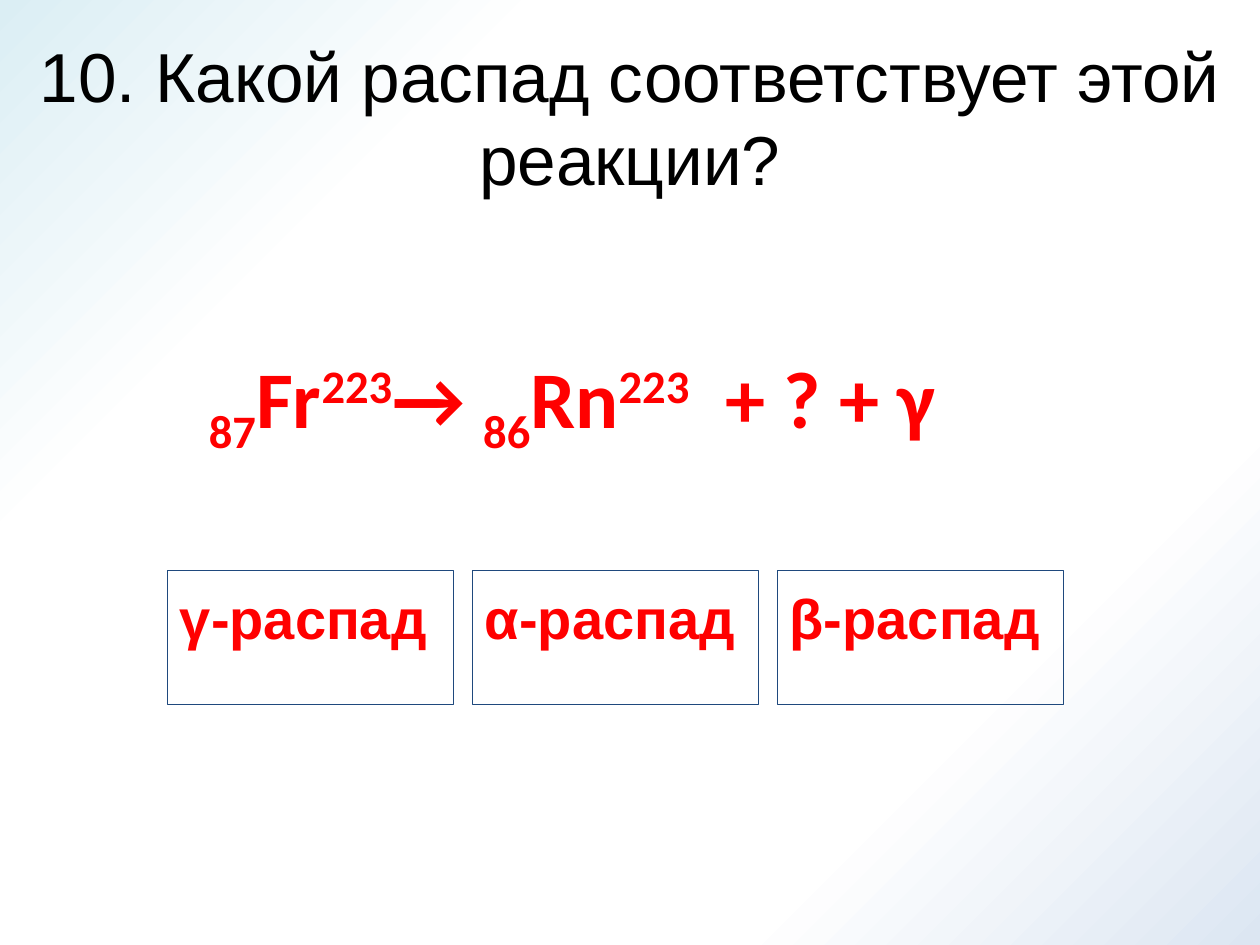
from lxml import etree
from pptx import Presentation
from pptx.dml.color import RGBColor
from pptx.enum.shapes import MSO_SHAPE
from pptx.enum.text import MSO_ANCHOR, PP_ALIGN
from pptx.oxml.ns import qn
from pptx.util import Inches, Pt

RECT = MSO_SHAPE.RECTANGLE
TOP, MIDDLE = MSO_ANCHOR.TOP, MSO_ANCHOR.MIDDLE
LEFT, CENTER = PP_ALIGN.LEFT, PP_ALIGN.CENTER

TITLE = "10. Какой распад соответствует этой реакции?"
SUB, BASE, SUPER = -25, 0, 30
EQUATION = [("87", SUB), ("Fr", BASE), ("223", SUPER), ("→ ", BASE),
            ("86", SUB), ("Rn", BASE), ("223", SUPER), ("  + ? + γ", BASE)]
ANSWERS = ["γ-распад", "α-распад", "β-распад"]
BACKGROUND = [(0, "DCE6F2"), (24, "FFFFFF"), (75, "FFFFFF"), (100, "DBEEF4")]
RED, BLACK, NAVY = "FF0000", "000000", "1F497D"
ANSWER_LEFT, ANSWER_TOP, ANSWER_W, ANSWER_H, ANSWER_STEP = 1.33, 4.53, 2.27, 1.06, 2.42


def rgb(color):
    return RGBColor.from_string(color)


def paint_background(s):
    fill = s.background.fill
    fill.gradient()
    fill.gradient_angle = 135
    stops = s.background._cSld.find(".//" + qn("a:gsLst"))
    for stop in list(stops):
        stops.remove(stop)
    for percent, color in BACKGROUND:
        stop = etree.SubElement(stops, qn("a:gs"), pos=str(percent * 1000))
        etree.SubElement(stop, qn("a:srgbClr"), val=color)


def write(shape, runs, font, size, color, bold=False, align=LEFT, anchor=TOP, top=0.1):
    """Fill a shape with one paragraph of (text, baseline percent) runs."""
    tf = shape.text_frame
    tf.word_wrap = True
    tf.vertical_anchor = anchor
    tf.margin_top = Inches(top)
    p = tf.paragraphs[0]
    p.alignment = align
    p.font.name, p.font.size, p.font.bold = font, Pt(size), bold
    p.font.color.rgb = rgb(color)
    for text, baseline in runs:
        r = p.add_run()
        r.text = text
        if baseline:
            r.font._element.set("baseline", str(baseline * 1000))


def add_text(s, left, top, width, height):
    return s.shapes.add_textbox(Inches(left), Inches(top), Inches(width), Inches(height))


def add_answer(s, index, text):
    box = s.shapes.add_shape(RECT, Inches(ANSWER_LEFT + index * ANSWER_STEP),
                             Inches(ANSWER_TOP), Inches(ANSWER_W), Inches(ANSWER_H))
    box.shadow.inherit = False
    box.fill.background()
    box.line.color.rgb = rgb(NAVY)
    box.line.width = Pt(0.75)
    write(box, [(text, BASE)], "Arial", 32, RED, bold=True)


def main():
    prs = Presentation()
    prs.slide_width, prs.slide_height = Inches(10), Inches(7.5)
    s = prs.slides.add_slide(prs.slide_layouts[6])
    paint_background(s)
    write(add_text(s, 0, 0.3, 10, 1.25), [(TITLE, BASE)], "Arial", 39.6, BLACK,
          align=CENTER, anchor=MIDDLE, top=0.05)
    write(add_text(s, 1.56, 2.66, 6.72, 1.06), EQUATION, "Calibri", 45.9, RED, bold=True)
    for index, text in enumerate(ANSWERS):
        add_answer(s, index, text)
    prs.save("out.pptx")


if __name__ == "__main__":
    main()
